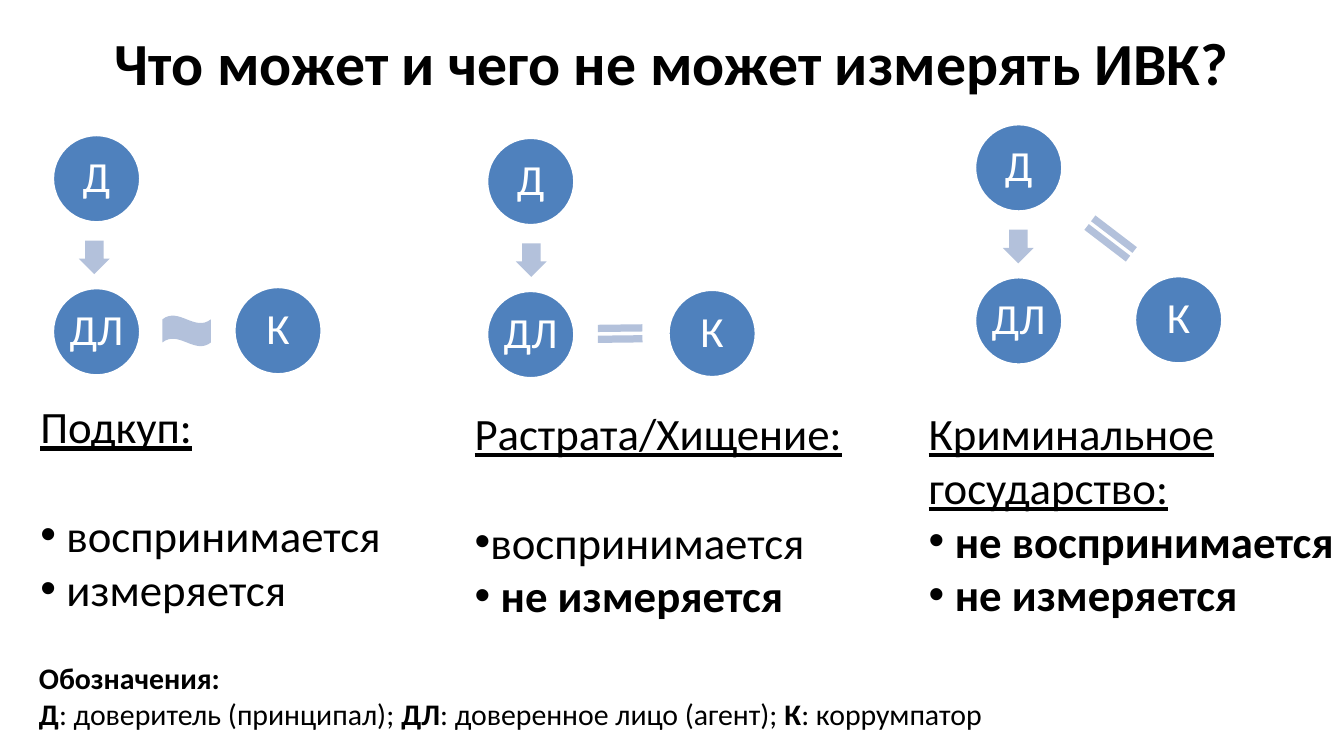
from dataclasses import dataclass
from lxml import etree
from pptx import Presentation
from pptx.dml.color import RGBColor
from pptx.enum.shapes import MSO_SHAPE
from pptx.enum.text import MSO_ANCHOR, MSO_AUTO_SIZE, PP_ALIGN
from pptx.oxml.ns import qn
from pptx.util import Pt

OVAL, ARROW = MSO_SHAPE.OVAL, MSO_SHAPE.RIGHT_ARROW
WAVE, EQUAL = MSO_SHAPE.WAVE, MSO_SHAPE.MATH_EQUAL
TOP, MIDDLE = MSO_ANCHOR.TOP, MSO_ANCHOR.MIDDLE
LEFT, CENTER = PP_ALIGN.LEFT, PP_ALIGN.CENTER
NO_AUTOFIT = MSO_AUTO_SIZE.NONE


@dataclass(frozen=True)
class Theme:
    font: str = "Calibri"
    text: RGBColor = RGBColor(0, 0, 0)
    light: RGBColor = RGBColor(255, 255, 255)
    circle: RGBColor = RGBColor(0x4F, 0x81, 0xBD)
    sign: RGBColor = RGBColor(0xB3, 0xC1, 0xDB)
    title_size: int = 32
    list_size: int = 24
    circle_size: int = 23
    legend_size: int = 16


theme = Theme()


def format_paragraph(paragraph, size, color=theme.text, align=LEFT, bullet=None, indent=0):
    paragraph.alignment = align
    paragraph.space_before = paragraph.space_after = Pt(0)
    properties = paragraph._p.get_or_add_pPr()
    properties.set("marL", str(Pt(indent)))
    properties.set("indent", str(-Pt(indent)))
    if bullet:
        etree.SubElement(properties, qn("a:buChar")).set("char", bullet)
    else:
        etree.SubElement(properties, qn("a:buNone"))
    for run in paragraph.runs:
        run.font.name = theme.font
        run.font.size = Pt(size)
        run.font.color.rgb = color


def add_filled_shape(kind, left, top, width, height, color, rotation=0):
    shape = slide.shapes.add_shape(kind, Pt(left), Pt(top), Pt(width), Pt(height))
    shape.shadow.inherit = False
    shape.fill.solid()
    shape.fill.fore_color.rgb = color
    shape.line.fill.background()
    shape.rotation = rotation
    return shape


presentation = Presentation()
presentation.slide_width, presentation.slide_height = Pt(720), Pt(405)
slide = presentation.slides.add_slide(presentation.slide_layouts[4])
title, *bodies = slide.placeholders

boxes = [
    (36, 16.5, 648, 33),
    (14.4, 210.2, 221, 124),
    (247, 213.8, 221, 124),
    (490.3, 213.8, 244, 124),
    (13.7, 350, 700, 46),
]
for placeholder, box in zip([title, *bodies], boxes):
    placeholder.left, placeholder.top, placeholder.width, placeholder.height = map(Pt, box)
    placeholder.text_frame.auto_size = NO_AUTOFIT
    placeholder.text_frame.word_wrap = True
    placeholder.text_frame.vertical_anchor = TOP

title.text_frame.text = "Что может и чего не может измерять ИВК?"
title.text_frame.vertical_anchor = MIDDLE
title_paragraph = title.text_frame.paragraphs[0]
format_paragraph(title_paragraph, theme.title_size, align=CENTER)
title_paragraph.runs[0].font.bold = True

diagrams = [
    (28, 72, 97.2, 13.5, (WAVE, 87, 169, 26, 16.5, 180)),
    (260.6, 73.5, 97.2, 15, (EQUAL, 316, 170.5, 32.5, 16.5, 359.3)),
    (522, 66.2, 85.7, 14.5, (EQUAL, 576, 119.5, 38, 16.5, 217.4)),
]
diameter = 47.5
for left, top, partner_offset, arrow_offset, sign in diagrams:
    nodes = [("Д", 0, 0), ("ДЛ", 0, 82), ("К", partner_offset, 81.4)]
    for label, x_offset, y_offset in nodes:
        circle = add_filled_shape(OVAL, left + x_offset, top + y_offset,
                                  diameter, diameter, theme.circle)
        circle.line.color.rgb = theme.light
        circle.line.width = Pt(2)
        frame = circle.text_frame
        frame.margin_left = frame.margin_right = frame.margin_top = frame.margin_bottom = Pt(2)
        frame.vertical_anchor = MIDDLE
        frame.word_wrap = False
        frame.text = label
        format_paragraph(frame.paragraphs[0], theme.circle_size, theme.light, CENTER)
        frame.paragraphs[0].line_spacing = 0.9
    arrow = add_filled_shape(ARROW, left + arrow_offset, top + 57.6, 18, 16.5, theme.sign, 90)
    arrow.adjustments[0] = 0.6
    kind, sign_left, sign_top, sign_width, sign_height, rotation = sign
    add_filled_shape(kind, sign_left, sign_top, sign_width, sign_height, theme.sign, rotation)

lists = [
    ("Подкуп:", 29.3, [("воспринимается", False, 14), ("измеряется", False, 14)]),
    ("Pастрата/Хищение:", 29.3, [("воспринимается", False, 8.5), ("не измеряется", True, 14)]),
    ("Криминальное государство:", 0,
     [("не воспринимается", True, 14), ("не измеряется", True, 14)]),
]
for body, (heading, gap, items) in zip(bodies, lists):
    frame = body.text_frame
    frame.text = heading
    heading_paragraph = frame.paragraphs[0]
    format_paragraph(heading_paragraph, theme.list_size)
    heading_paragraph.space_after = Pt(gap)
    heading_paragraph.runs[0].font.underline = True
    heading_paragraph.runs[0].font.bold = False
    for item, bold, indent in items:
        paragraph = frame.add_paragraph()
        paragraph.text = item
        format_paragraph(paragraph, theme.list_size, bullet="•", indent=indent)
        paragraph.runs[0].font.bold = bold

legend = bodies[3].text_frame
legend.text = "Обозначения:"
legend.paragraphs[0].runs[0].font.bold = True
format_paragraph(legend.paragraphs[0], theme.legend_size)
terms = legend.add_paragraph()
for term, meaning in [
    ("Д", ": доверитель (принципал); "),
    ("ДЛ", ": доверенное лицо (aгент); "),
    ("К", ": коррумпатор"),
]:
    for text, bold in [(term, True), (meaning, False)]:
        run = terms.add_run()
        run.text = text
        run.font.bold = bold
format_paragraph(terms, theme.legend_size)

presentation.save("out.pptx")
